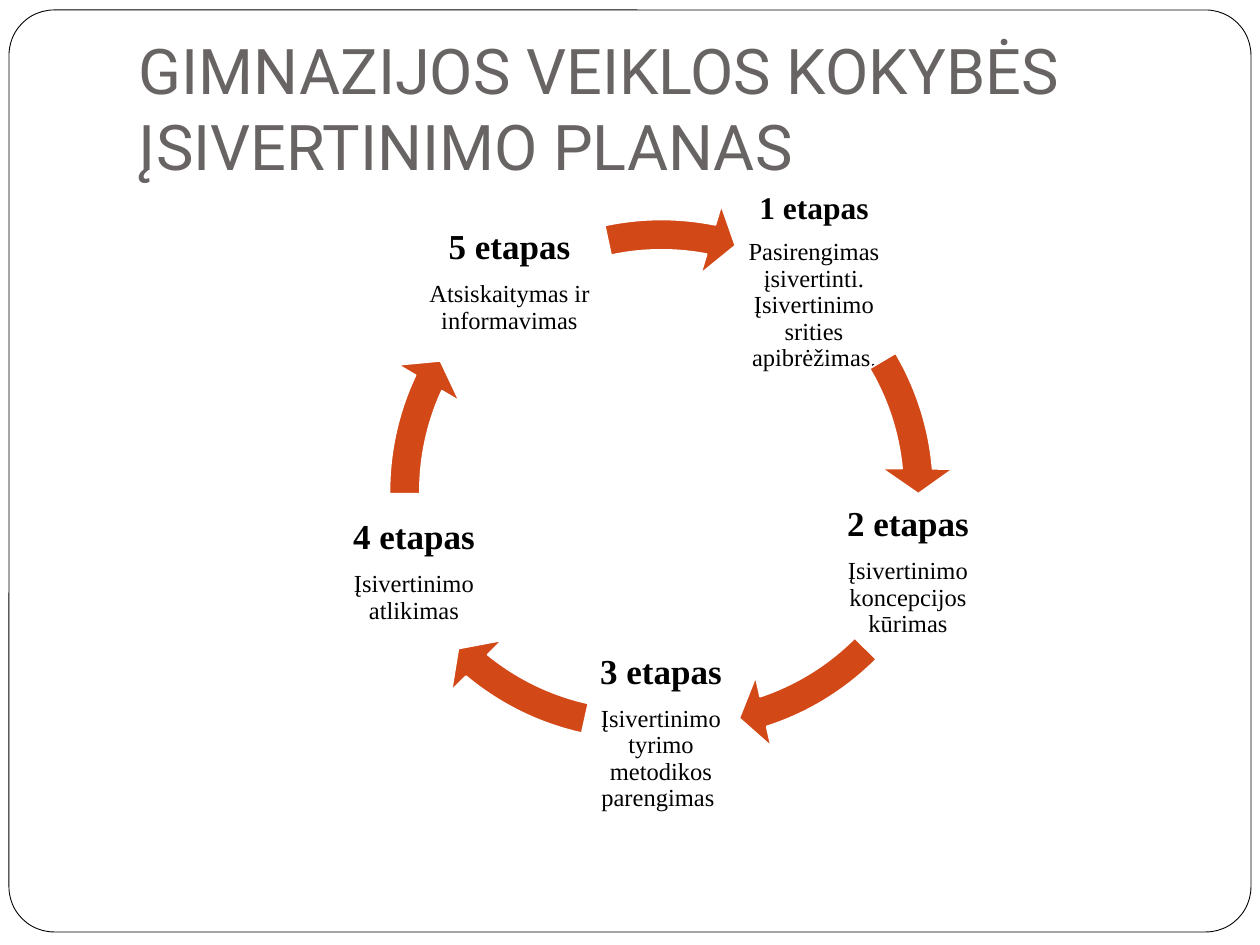
"""Build the slide with the five-stage self-evaluation cycle."""
from typing import NamedTuple

import pptx
import pptx.dml.color
import pptx.enum.shapes
import pptx.enum.text
import pptx.util

RGB = pptx.dml.color.RGBColor
KIND = pptx.enum.shapes.MSO_SHAPE
ALIGN = pptx.enum.text.PP_ALIGN
ANCHOR = pptx.enum.text.MSO_ANCHOR
SIZING = pptx.enum.text.MSO_AUTO_SIZE
Pt = pptx.util.Pt

BLACK = RGB(0x00, 0x00, 0x00)
WHITE = RGB(0xFF, 0xFF, 0xFF)
GRAY = RGB(0x69, 0x64, 0x64)
RUST = RGB(0xD3, 0x48, 0x17)
SCALE = 914400 / 126
SIDE = 156
RING = 585
TITLE = "GIMNAZIJOS VEIKLOS KOKYBĖS ĮSIVERTINIMO PLANAS"


class Stage(NamedTuple):
    left: int
    top: int
    width: int
    head: str
    size: int
    body: str
    tail: str = ""


class Arrow(NamedTuple):
    left: int
    top: int
    start: float
    end: float


STAGES = [
    Stage(736, 204, SIDE, "1 etapas", 18,
          "Pasirengimas įsivertinti. Įsivertinimo srities apibrėžimas", "."),
    Stage(830, 494, SIDE, "2 etapas", 20, "Įsivertinimo koncepcijos kūrimas"),
    Stage(583, 655, SIDE, "3 etapas", 20,
          "Įsivertinimo tyrimo metodikos parengimas "),
    Stage(336, 494, SIDE, "4 etapas", 20, "Įsivertinimo atlikimas"),
    Stage(411, 204, 197, "5 etapas", 20, "Atsiskaitymas ir informavimas"),
]
ARROWS = [
    Arrow(369, 199, 329.42, 354.91),
    Arrow(391, 175, 44.84, 71.87),
    Arrow(348, 175, 102.46, 129.58),
    Arrow(369, 199, 179.5, 204.99),
    Arrow(369, 199, 257.95, 281.12),
]


def px(*sizes: int) -> list[int]:
    """Turn pixels into EMU."""
    return [round(size * SCALE) for size in sizes]


def style(run, name: str, size: int, color: RGB, bold: bool = False) -> None:
    """Format one run of text."""
    font = run.font
    font.name, font.size, font.bold = name, Pt(size), bold
    font.color.rgb = color


def inset(frame, left: int, top: int, right: int, base: int) -> None:
    """Set the margins, wrapping and fixed size of a text frame."""
    (frame.margin_left, frame.margin_top,
     frame.margin_right, frame.margin_bottom) = px(left, top, right, base)
    frame.word_wrap = True
    frame.auto_size = SIZING.NONE


def paint(shape, fill: RGB, line: RGB, width: float) -> None:
    """Give a shape a flat fill and outline."""
    shape.shadow.inherit = False
    shape.fill.solid()
    shape.fill.fore_color.rgb = fill
    shape.line.color.rgb = line
    shape.line.width = Pt(width)


def draw_title(slide) -> None:
    """Place the title above the rounded border."""
    title = slide.shapes.title
    title.left, title.top, title.width, title.height = px(126, 38, 1071, 158)
    frame = title.text_frame
    frame.text = TITLE
    inset(frame, 13, 6, 13, 13)
    frame.vertical_anchor = ANCHOR.BOTTOM
    para = frame.paragraphs[0]
    para.alignment = ALIGN.LEFT
    style(para.runs[0], "Roboto", 36, GRAY)
    border = slide.shapes.add_shape(
        KIND.ROUNDED_RECTANGLE, *px(9, 10, 1242, 922))
    border.adjustments[0] = 0.049
    paint(border, WHITE, BLACK, 0.5)
    title.element.addprevious(border.element)


def draw_stage(slide, stage: Stage) -> None:
    """Write the heading and the task of one stage."""
    box = slide.shapes.add_textbox(
        *px(stage.left, stage.top, stage.width, SIDE))
    frame = box.text_frame
    inset(frame, 4, 4, 4, 4)
    frame.vertical_anchor = ANCHOR.MIDDLE
    frame.text = f"{stage.head}\n{stage.body}"
    head, body = frame.paragraphs
    for para, size in ((head, stage.size), (body, 14)):
        para.alignment = ALIGN.CENTER
        para.line_spacing = 0.9
        para.space_after = Pt(size * 0.42)
        style(para.runs[0], "Times New Roman", size, BLACK, para is head)
    if stage.tail:
        run = body.add_run()
        run.text = stage.tail
        style(run, "Times New Roman", 12, BLACK)


def draw_arrow(slide, arrow: Arrow) -> None:
    """Draw one arc of the cycle, with angles in degrees."""
    shape = slide.shapes.add_shape(
        KIND.CIRCULAR_ARROW, *px(arrow.left, arrow.top, RING, RING))
    values = (0.052, 3.356, arrow.end * 0.6, arrow.start * 0.6, 0.061)
    for index, value in enumerate(values):
        shape.adjustments[index] = value
    paint(shape, RUST, WHITE, 1)


def main() -> None:
    """Build and save the deck."""
    deck = pptx.Presentation()
    deck.slide_width, deck.slide_height = px(1260, 945)
    slide = deck.slides.add_slide(deck.slide_layouts[5])
    draw_title(slide)
    for stage, arrow in zip(STAGES, ARROWS):
        draw_stage(slide, stage)
        draw_arrow(slide, arrow)
    deck.save("out.pptx")


if __name__ == "__main__":
    main()
